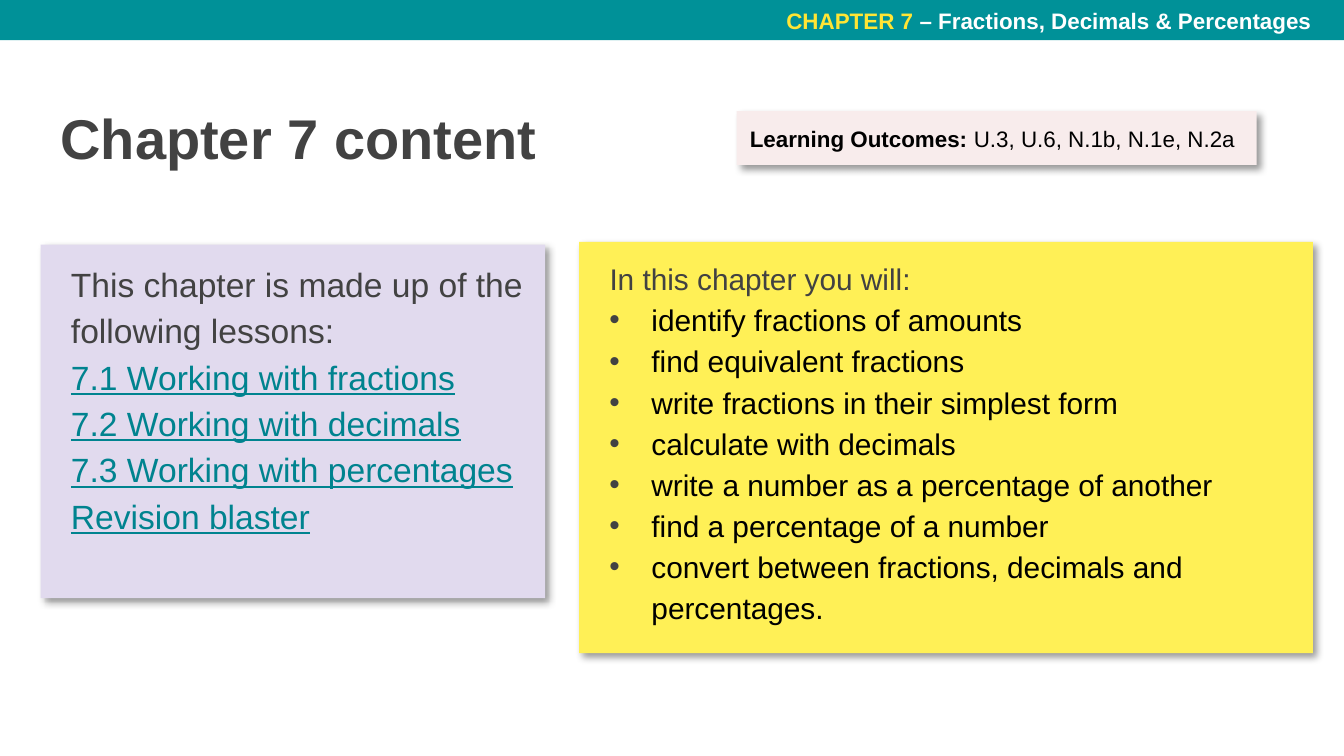
from lxml import etree
from pptx import Presentation
from pptx.dml.color import RGBColor
from pptx.enum.shapes import MSO_SHAPE
from pptx.enum.text import MSO_ANCHOR, MSO_AUTO_SIZE, PP_ALIGN
from pptx.oxml.ns import qn
from pptx.util import Pt

RECT = MSO_SHAPE.RECTANGLE
TOP, MIDDLE = MSO_ANCHOR.TOP, MSO_ANCHOR.MIDDLE
LEFT, CENTER = PP_ALIGN.LEFT, PP_ALIGN.CENTER
NO_FIT = MSO_AUTO_SIZE.NONE

TEAL = RGBColor(0x00, 0x91, 0x98)
LINK = RGBColor(0x00, 0x83, 0x8F)
GOLD = RGBColor(0xFF, 0xE5, 0x35)
YELLOW = RGBColor(0xFF, 0xF0, 0x56)
LILAC = RGBColor(0xE1, 0xDA, 0xEE)
PINK = RGBColor(0xF8, 0xEC, 0xEC)
GREY = RGBColor(0x42, 0x42, 0x42)
BLACK = RGBColor(0x00, 0x00, 0x00)
WHITE = RGBColor(0xFF, 0xFF, 0xFF)

FONT = "Arial"
INSET = Pt(7.2)
INDENT = 9
BULLET_INDENT = 31.5
BULLET_HANG = 22.5

LESSONS = [
    "7.1 Working with fractions",
    "7.2 Working with decimals",
    "7.3 Working with percentages",
    "Revision blaster",
]
GOALS = [
    "identify fractions of amounts",
    "find equivalent fractions",
    "write fractions in their simplest form",
    "calculate with decimals",
    "write a number as a percentage of another",
    "find a percentage of a number",
    "convert between fractions, decimals and percentages.",
]


def place(sp, box):
    """Move and size a shape to a box given in points."""
    sp.left, sp.top, sp.width, sp.height = map(Pt, box)


def paint(sp, color, shadow=False):
    """Fill a shape without outline, with an optional soft shadow."""
    sp.fill.solid()
    sp.fill.fore_color.rgb = color
    sp.line.fill.background()
    sp.shadow.inherit = False
    if shadow:
        effects = sp._element.spPr.find(qn("a:effectLst"))
        outer = etree.SubElement(
            effects, qn("a:outerShdw"), blurRad=str(Pt(4)), dist=str(Pt(3)),
            dir="2700000", algn="bl", rotWithShape="0")
        clr = etree.SubElement(outer, qn("a:srgbClr"), val=str(BLACK))
        etree.SubElement(clr, qn("a:alpha"), val="40000")


def frame(sp, anchor=TOP, wrap=True):
    """Return the text frame of a shape with margins, anchor and wrap set."""
    tf = sp.text_frame
    tf.margin_left = tf.margin_right = tf.margin_top = tf.margin_bottom = INSET
    tf.vertical_anchor = anchor
    tf.word_wrap = wrap
    tf.auto_size = NO_FIT
    return tf


def add_run(p, text, size, color, bold=False, underline=False):
    """Append a formatted run to a paragraph."""
    r = p.add_run()
    r.text = text
    r.font.name, r.font.size = FONT, Pt(size)
    r.font.bold, r.font.underline = bold, underline
    r.font.color.rgb = color


def list_format(p, bullet):
    """Set spacing, indent and bullet of a list paragraph."""
    p.alignment = LEFT
    p.line_spacing = 1.15
    p.space_before = p.space_after = Pt(0)
    pPr = p._p.get_or_add_pPr()
    pPr.set("marL", str(Pt(BULLET_INDENT if bullet else INDENT)))
    pPr.set("indent", str(Pt(-BULLET_HANG if bullet else 0)))
    if bullet:
        clr = etree.SubElement(pPr, qn("a:buClr"))
        etree.SubElement(clr, qn("a:srgbClr"), val=str(GREY))
        etree.SubElement(pPr, qn("a:buFont"), typeface=FONT)
        etree.SubElement(pPr, qn("a:buChar"), char="•")
    else:
        etree.SubElement(pPr, qn("a:buNone"))


def header(s, box):
    """Draw the chapter band with its label near the right end."""
    left, top, width, height = box
    sp = s.shapes.add_shape(RECT, *map(Pt, box))
    paint(sp, TEAL)
    label_width = 297.4
    label = (left + width - label_width - 9.3, top, label_width, height + 0.6)
    tf = frame(s.shapes.add_textbox(*map(Pt, label)), MIDDLE, wrap=False)
    p = tf.paragraphs[0]
    p.alignment = CENTER
    add_run(p, "CHAPTER 7 ", 12, GOLD, bold=True)
    add_run(p, "– Fractions, Decimals & Percentages", 12, WHITE, bold=True)


def title(s, box):
    """Fill the title placeholder."""
    sp = s.shapes.title
    place(sp, box)
    p = frame(sp).paragraphs[0]
    p.alignment = LEFT
    add_run(p, "Chapter 7 content", 30, GREY, bold=True)


def outcomes(s, box):
    """Draw the learning outcomes label."""
    sp = s.shapes.add_shape(RECT, *map(Pt, box))
    paint(sp, PINK, shadow=True)
    p = frame(sp).paragraphs[0]
    p.alignment = LEFT
    add_run(p, "Learning Outcomes: ", 12, BLACK, bold=True)
    add_run(p, "U.3, U.6, N.1b, N.1e, N.2a", 12, BLACK)


def panel(sp, box, fill, intro, items, size, color, bullet=False, underline=False):
    """Fill a body placeholder with an intro line and a list on a panel."""
    place(sp, box)
    paint(sp, fill, shadow=True)
    tf = frame(sp)
    p = tf.paragraphs[0]
    list_format(p, False)
    add_run(p, intro, size, GREY)
    for item in items:
        p = tf.add_paragraph()
        list_format(p, bullet)
        add_run(p, item, size, color, underline=underline)


def main():
    """Build and save the slide."""
    prs = Presentation()
    prs.slide_width, prs.slide_height = Pt(720), Pt(405)
    s = prs.slides.add_slide(prs.slide_layouts[3])
    header(s, (0, 0, 720, 21.6))
    title(s, (25.2, 48.2, 671, 51.1))
    panel(s.placeholders[1], (21.8, 131, 270.2, 189.4), LILAC,
          "This chapter is made up of the following lessons:",
          LESSONS, 18, LINK, underline=True)
    outcomes(s, (394.6, 59.6, 278.6, 28.8))
    panel(s.placeholders[2], (310.3, 129.6, 393.1, 220.3), YELLOW,
          "In this chapter you will:", GOALS, 16, BLACK, bullet=True)
    prs.save("out.pptx")


if __name__ == "__main__":
    main()
